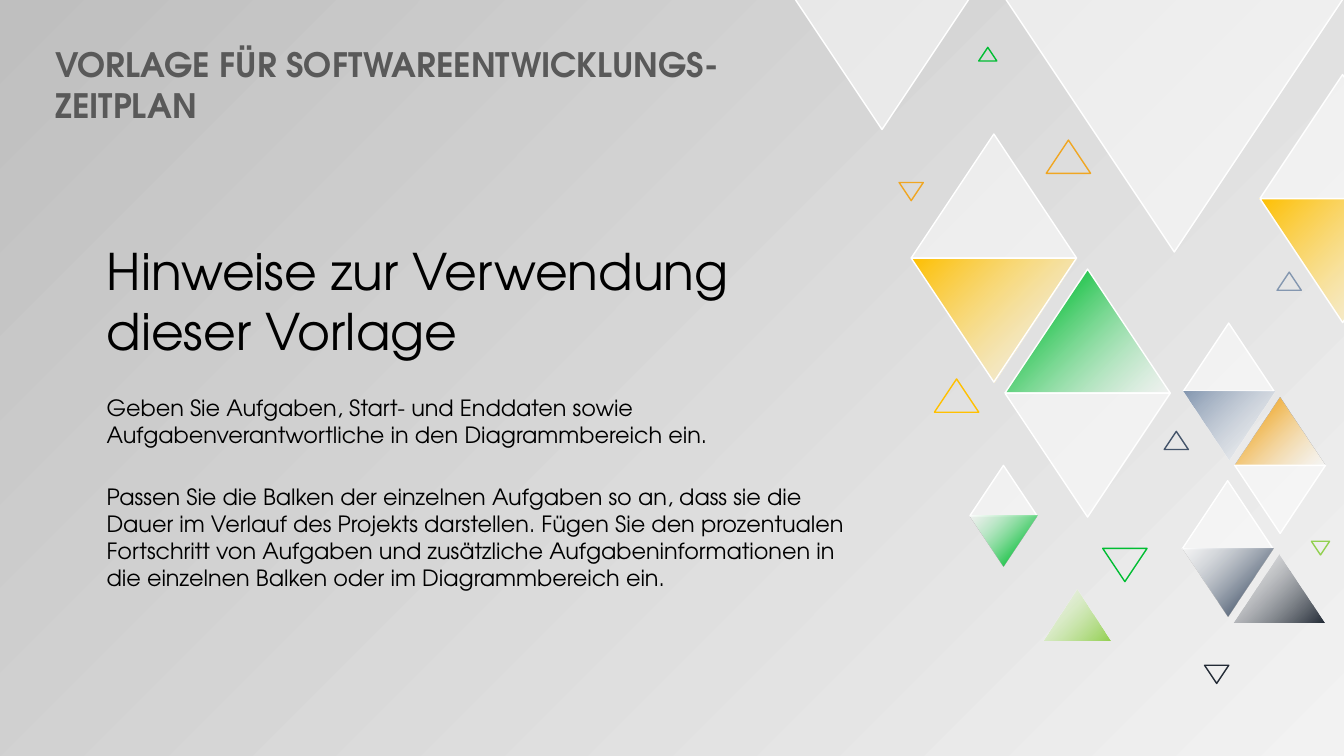
"""Build the template-notes slide with its field of triangles."""
import dataclasses

import lxml.etree
import pptx
import pptx.dml.color
import pptx.enum.shapes
import pptx.enum.text
import pptx.oxml.ns
import pptx.util

CELL = pptx.util.Inches(1 / 3)
COLUMNS, ROWS = 40, 22.5
SLOPE = 0.75


@dataclasses.dataclass(frozen=True)
class Theme:
    """Colours as RRGGBB, type sizes and line width in points."""

    font: str = "TeX Gyre Adventor"
    header_size: int = 24
    title_size: int = 36
    body_size: int = 16
    line_width: int = 1
    header: str = "595959"
    text: str = "000000"
    white: str = "FFFFFF"
    light: str = "F2F2F2"
    shade: str = "BFBFBF"
    gold: str = "FFC000"
    green: str = "00BD32"
    lime: str = "92D050"
    orange: str = "F0A622"
    steel: str = "8497B0"
    slate: str = "44546A"
    ink: str = "222A35"


THEME = Theme()
GLASS = [(0, THEME.white, 50)]


def fade_out(colour):
    """Return stops from a colour to half-clear white."""
    return [(0, colour, 100), (100, THEME.white, 50)]


def fade_in(colour):
    """Return stops from half-clear white to a colour."""
    return [(0, THEME.white, 50), (82, colour, 100)]


def rgb(colour):
    """Turn an RRGGBB string into a colour."""
    return pptx.dml.color.RGBColor.from_string(colour)


def cells(*counts):
    """Turn grid counts into lengths."""
    return [round(count * CELL) for count in counts]


def paint(fill, element, stops):
    """Give a fill one colour, or a diagonal gradient, with opacity in percent."""
    if len(stops) == 1:
        fill.solid()
        fill.fore_color.rgb = rgb(stops[0][1])
    else:
        fill.gradient()
        fill.gradient_angle = 135
        for stop, (position, colour, _) in zip(fill.gradient_stops, stops):
            stop.position = position / 100
            stop.color.rgb = rgb(colour)
    tag = pptx.oxml.ns.qn("a:srgbClr")
    for node, (_, _, opacity) in zip(list(element.iter(tag)), stops):
        if opacity < 100:
            alpha = lxml.etree.SubElement(node, pptx.oxml.ns.qn("a:alpha"))
            alpha.set("val", str(opacity * 1000))


def add_triangle(page, column, row, width, down=False, stops=None, line=None):
    """Add a triangle whose height follows from its width."""
    shape = page.shapes.add_shape(
        pptx.enum.shapes.MSO_SHAPE.ISOSCELES_TRIANGLE,
        *cells(column, row, width, width * SLOPE))
    shape.shadow.inherit = False
    shape.rotation = 180 if down else 0
    if stops:
        paint(shape.fill, shape._element.spPr, stops)
    else:
        shape.fill.background()
    if line:
        shape.line.color.rgb = rgb(line)
        shape.line.width = pptx.util.Pt(THEME.line_width)
    else:
        shape.line.fill.background()


def add_diamond(page, column, middle, width, upper, lower, edged=False):
    """Add two triangles that meet at the middle row."""
    for stops, down in ((upper, False), (lower, True)):
        row = middle if down else middle - width * SLOPE
        line = THEME.white if edged or stops is GLASS else None
        add_triangle(page, column, row, width, down, stops, line)


def add_text(page, paragraphs, place, size, colour=THEME.text, bold=False, gap=0):
    """Add a wrapping text box with a gap between paragraphs."""
    box = page.shapes.add_textbox(*cells(*place))
    frame = box.text_frame
    frame.word_wrap = True
    frame.auto_size = pptx.enum.text.MSO_AUTO_SIZE.SHAPE_TO_FIT_TEXT
    for index, text in enumerate(paragraphs):
        para = frame.add_paragraph() if index else frame.paragraphs[0]
        para.space_before = pptx.util.Pt(gap if index else 0)
        span = para.add_run()
        span.text = text
        span.font.name = THEME.font
        span.font.size = pptx.util.Pt(size)
        span.font.bold = bold
        span.font.color.rgb = rgb(colour)


def add_pattern(page):
    """Add the diamonds and the filled and outlined triangles."""
    gold, green = fade_out(THEME.gold), fade_in(THEME.green)
    for diamond in (
        (27.12, 7.68, 4.92, GLASS, gold, True),
        (29.91, 11.7, 4.92, green, GLASS, True),
        (37.5, 5.91, 4.92, GLASS, gold, True),
        (35.19, 16.33, 2.7, GLASS, fade_in(THEME.slate)),
        (35.22, 11.64, 2.7, GLASS, fade_out(THEME.steel)),
        (36.75, 13.85, 2.7, fade_in(THEME.orange), GLASS),
        (28.86, 15.36, 2.01, GLASS, green),
    ):
        add_diamond(page, *diamond)
    for filled in (
        (29.91, -0.06, 10.08, True, GLASS, THEME.white),
        (23.64, -0.06, 5.22, True, GLASS, THEME.white),
        (36.72, 16.5, 2.7, False, fade_out(THEME.ink)),
        (31.05, 17.55, 2.01, False, fade_out(THEME.lime)),
    ):
        add_triangle(page, *filled)
    large, medium, small = 1.32, 0.72, 0.54
    for column, row, width, down, colour in (
        (32.82, 16.32, large, True, THEME.green),
        (27.81, 11.28, large, False, THEME.gold),
        (31.14, 4.17, large, False, THEME.orange),
        (34.65, 12.84, medium, False, THEME.slate),
        (35.85, 19.8, medium, True, THEME.ink),
        (26.76, 5.43, medium, True, THEME.orange),
        (38.01, 8.1, medium, False, THEME.steel),
        (29.13, 1.41, small, False, THEME.green),
        (39.03, 16.11, small, True, THEME.lime),
    ):
        add_triangle(page, column, row, width, down, line=colour)


def main():
    """Build and save the deck."""
    deck = pptx.Presentation()
    deck.slide_width, deck.slide_height = cells(COLUMNS, ROWS)
    page = deck.slides.add_slide(deck.slide_layouts[6])
    paint(page.background.fill, page._element,
          [(0, THEME.light, 40), (100, THEME.shade, 100)])
    add_text(page, ["Hinweise zur Verwendung dieser Vorlage"],
             (2.88, 6.99, 19.53, 3.93), THEME.title_size)
    add_text(page, [
        "Geben Sie Aufgaben, Start- und Enddaten sowie "
        "Aufgabenverantwortliche in den Diagrammbereich ein.",
        "Passen Sie die Balken der einzelnen Aufgaben so an, dass sie die "
        "Dauer im Verlauf des Projekts darstellen. Fügen Sie den prozentualen "
        "Fortschritt von Aufgaben und zusätzliche Aufgabeninformationen in "
        "die einzelnen Balken oder im Diagrammbereich ein.",
    ], (2.88, 11.58, 22.8, 6.21), THEME.body_size, gap=25.5)
    add_pattern(page)
    add_text(page, ["VORLAGE FÜR SOFTWAREENTWICKLUNGS-ZEITPLAN"],
             (1.35, 1.17, 23.97, 1.5), THEME.header_size, THEME.header, bold=True)
    deck.save("out.pptx")


if __name__ == "__main__":
    main()
